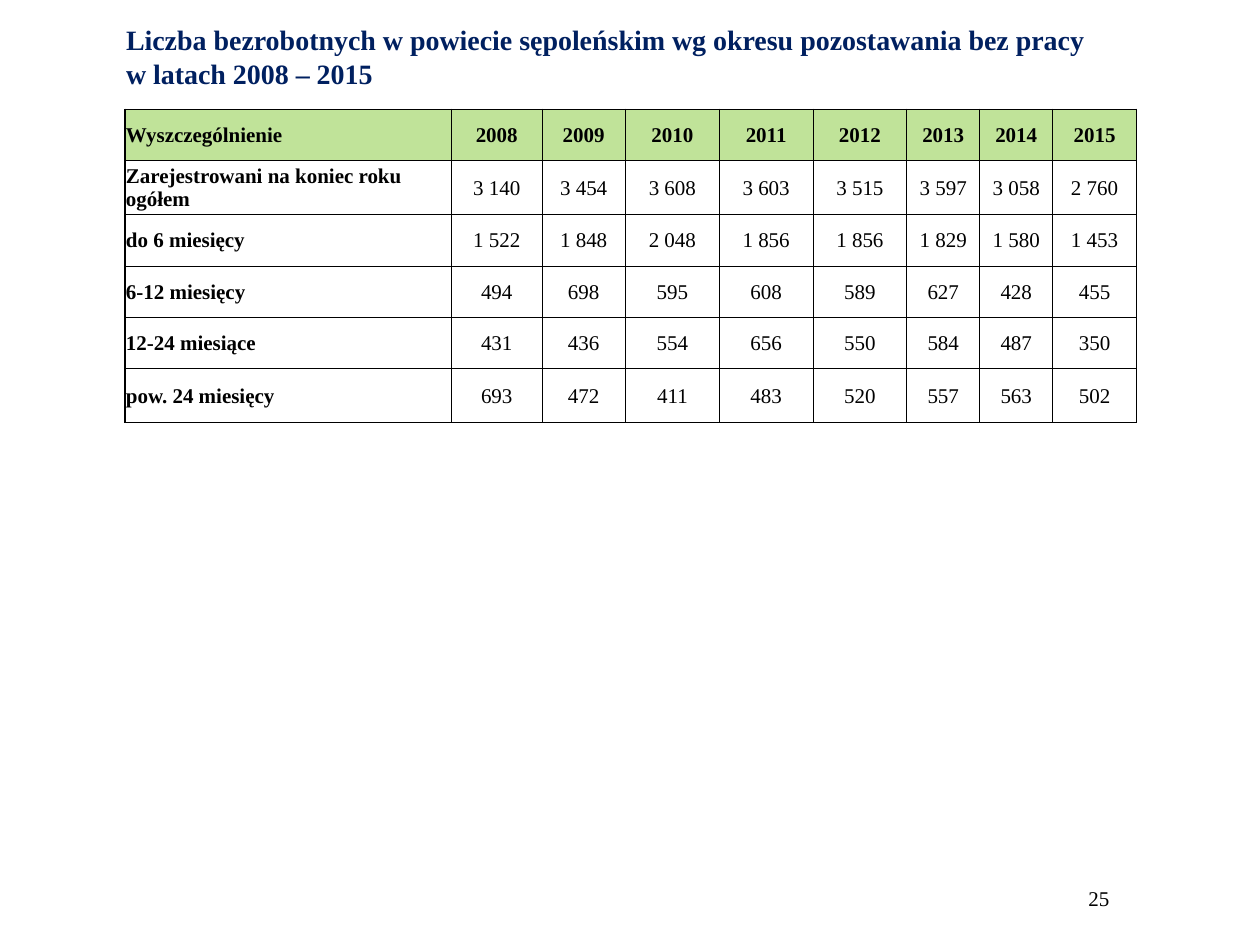
from dataclasses import dataclass

from lxml import etree
from pptx import Presentation
from pptx.dml.color import RGBColor
from pptx.enum import text
from pptx.oxml import ns
from pptx.util import Pt


@dataclass(frozen=True)
class Theme:
    font: str = "Times New Roman"
    title_color: str = "002060"
    ink: str = "000000"
    header_fill: str = "C0E399"
    title_size: float = 16
    body_size: float = 12
    outer_line: float = 1
    inner_line: float = 0.5


TITLE = ("Liczba bezrobotnych w powiecie sępoleńskim wg okresu pozostawania bez pracy"
         "\vw latach 2008 – 2015")
ROWS = [
    ["Wyszczególnienie", *map(str, range(2008, 2016))],
    ["Zarejestrowani na koniec roku ogółem", "3 140", "3 454", "3 608", "3 603",
     "3 515", "3 597", "3 058", "2 760"],
    ["do 6 miesięcy", "1 522", "1 848", "2 048", "1 856", "1 856", "1 829", "1 580", "1 453"],
    ["6-12 miesięcy", "494", "698", "595", "608", "589", "627", "428", "455"],
    ["12-24 miesiące", "431", "436", "554", "656", "550", "584", "487", "350"],
    ["pow. 24 miesięcy", "693", "472", "411", "483", "520", "557", "563", "502"],
]
COLUMN_WIDTHS = [186.6, 51.6, 47.8, 53.6, 53.6, 53.6, 41.7, 41.7, 47.8]
ROW_HEIGHTS = [29.3, 30.8, 29.5, 29.3, 29.3, 30.8]


def write_text(frame, content, *, font, size, color, bold=False,
               align=text.PP_ALIGN.LEFT):
    """Fill a text frame with one formatted paragraph."""
    frame.text = content
    paragraph = frame.paragraphs[0]
    paragraph.alignment = align
    for run in paragraph.runs:
        run.font.name = font
        run.font.size = Pt(size)
        run.font.bold = bold
        run.font.color.rgb = RGBColor.from_string(color)


class SlideBuilder:
    def __init__(self, slide, theme):
        self.slide = slide
        self.theme = theme

    def title(self, content, left, top, width, height):
        shape = self.slide.shapes.title
        shape.left, shape.top, shape.width, shape.height = map(Pt, (left, top, width, height))
        frame = shape.text_frame
        frame.auto_size = text.MSO_AUTO_SIZE.NONE
        frame.vertical_anchor = text.MSO_ANCHOR.TOP
        write_text(frame, content, font=self.theme.font, size=self.theme.title_size,
                   color=self.theme.title_color, bold=True)

    def label(self, content, left, top, width, height):
        shape = self.slide.shapes.add_textbox(*map(Pt, (left, top, width, height)))
        shape.text_frame.word_wrap = False
        write_text(shape.text_frame, content, font=self.theme.font,
                   size=self.theme.body_size, color=self.theme.ink)

    def borders(self, cell, outer_sides):
        properties = cell._tc.get_or_add_tcPr()
        for side in "LRTB":
            width = self.theme.outer_line if side in outer_sides else self.theme.inner_line
            line = etree.SubElement(properties, ns.qn(f"a:ln{side}"), w=str(Pt(width)))
            fill = etree.SubElement(line, ns.qn("a:solidFill"))
            etree.SubElement(fill, ns.qn("a:srgbClr"), val=self.theme.ink)

    def table(self, rows, left, top, widths, heights):
        table = self.slide.shapes.add_table(
            len(rows), len(widths), Pt(left), Pt(top),
            Pt(sum(widths)), Pt(sum(heights))).table
        table.horz_banding = False
        for column, width in zip(table.columns, widths):
            column.width = Pt(width)
        for row, height in zip(table.rows, heights):
            row.height = Pt(height)

        last_row, last_column = len(rows) - 1, len(widths) - 1
        for r, values in enumerate(rows):
            for c, value in enumerate(values):
                cell = table.cell(r, c)
                cell.margin_left = cell.margin_right = cell.margin_top = Pt(0.5)
                cell.margin_bottom = 0
                cell.vertical_anchor = text.MSO_ANCHOR.MIDDLE
                write_text(cell.text_frame, value, font=self.theme.font,
                           size=self.theme.body_size, color=self.theme.ink,
                           bold=r == 0 or c == 0,
                           align=text.PP_ALIGN.CENTER if c else text.PP_ALIGN.LEFT)
                # Thicker lines around the outside of the table
                edges = {"L": c == 0, "R": c == last_column, "T": r == 0, "B": r == last_row}
                self.borders(cell, [side for side, outer in edges.items() if outer])
                if r == 0:
                    cell.fill.solid()
                    cell.fill.fore_color.rgb = RGBColor.from_string(self.theme.header_fill)
                else:
                    cell.fill.background()


def main():
    presentation = Presentation()
    presentation.slide_width, presentation.slide_height = Pt(720), Pt(540)
    slide = presentation.slides.add_slide(presentation.slide_layouts[5])
    builder = SlideBuilder(slide, Theme())

    # Unemployment by duration
    builder.table(ROWS, 71.5, 62.5, COLUMN_WIDTHS, ROW_HEIGHTS)
    # Heading
    builder.title(TITLE, 64.8, 9.4, 607, 46)
    # Page number
    builder.label("25", 614.9, 502.6, 26.6, 21.6)

    presentation.save("out.pptx")


if __name__ == "__main__":
    main()
